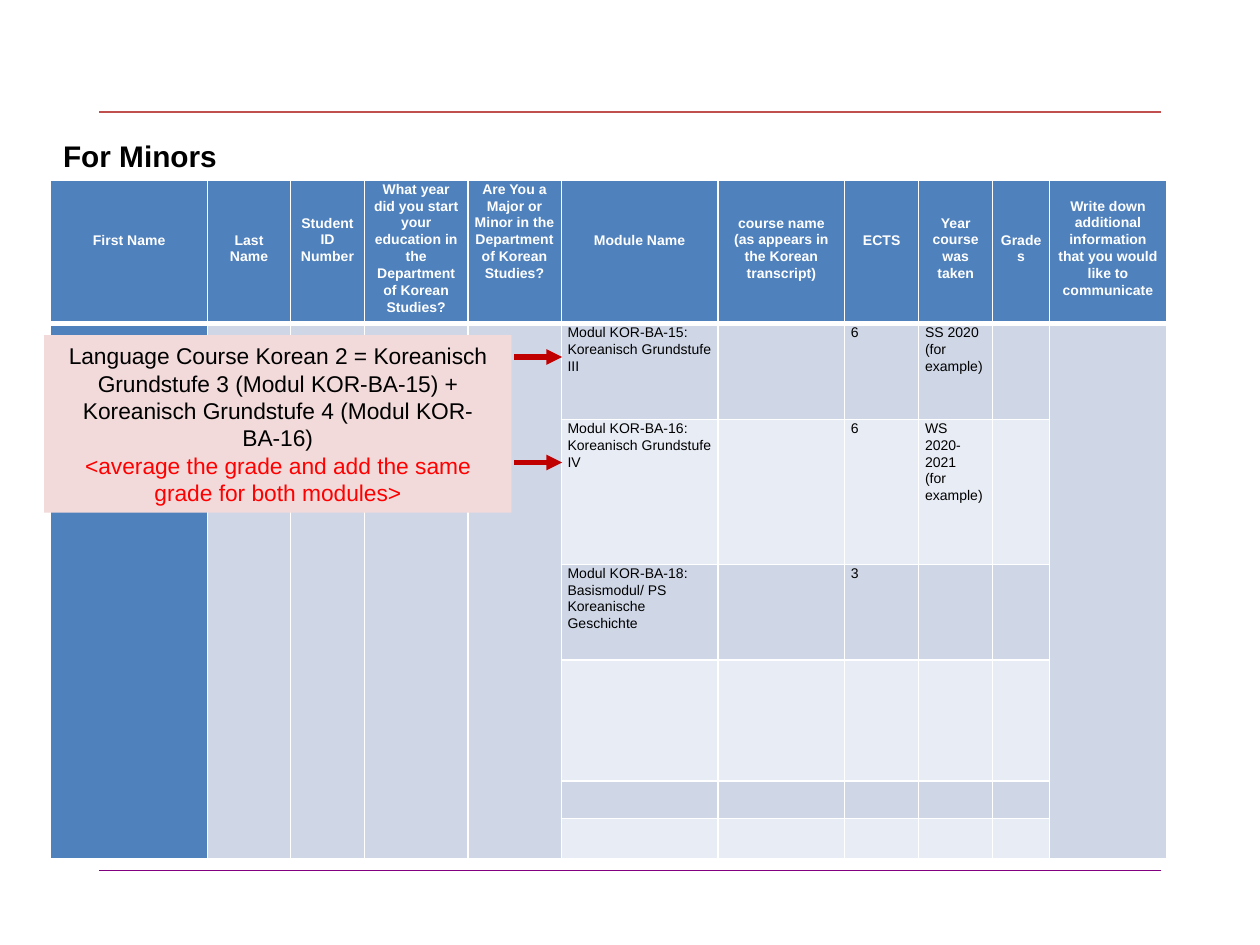
from lxml import etree
from pptx import Presentation
from pptx.dml.color import RGBColor
from pptx.enum import shapes, text
from pptx.oxml.ns import qn
from pptx.util import Pt

FONT = "Arial"
WHITE = RGBColor(0xFF, 0xFF, 0xFF)
BLACK = RGBColor(0, 0, 0)
RED = RGBColor(0xFF, 0, 0)
HEADER_BLUE = RGBColor(0x4F, 0x81, 0xBD)
BAND_DARK = RGBColor(0xCF, 0xD7, 0xE7)
BAND_LIGHT = RGBColor(0xE8, 0xEC, 0xF4)
CALLOUT_PINK = RGBColor(0xF2, 0xDA, 0xDA)
ARROW_RED = RGBColor(0xC0, 0, 0)
RULE_RED = RGBColor(0xC0, 0x50, 0x4D)
RULE_PURPLE = RGBColor(0x80, 0, 0x80)

LINE_HEIGHT = 9.7
COLUMN_WIDTHS = [89.7, 47.3, 42.4, 59, 53.4, 89.7, 72.3, 42.3, 42.3, 32.5, 66.8]
ROW_HEIGHTS = [82, 54.7, 82.8, 54.7, 69.1, 21.6, 23]
MERGED_COLUMNS = [0, 1, 2, 3, 4, 10]

# Each heading: lines left free above it, then its paragraphs
HEADINGS = [
    (3, ["First Name"]),
    (3, ["Last Name"]),
    (2, ["Student ID Number"]),
    (0, ["What year did you start your education in the Department of Korean Studies?"]),
    (0, ["Are You a Major or Minor in the Department of Korean Studies?"]),
    (3, ["Module Name"]),
    (2, ["course name", "(as appears in the Korean transcript)"]),
    (3, ["ECTS"]),
    (2, ["Year course was taken"]),
    (3, ["Grades"]),
    (1, ["Write down additional information that you would like to communicate"]),
]
ENTRIES = {
    (1, 5): ["Modul KOR-BA-15:", "Koreanisch Grundstufe", "III"],
    (1, 7): ["6"],
    (1, 8): ["SS 2020 (for example)"],
    (2, 5): ["Modul KOR-BA-16:", "Koreanisch Grundstufe", "IV"],
    (2, 7): ["6"],
    (2, 8): ["WS 2020-2021", "(for example)"],
    (3, 5): ["Modul KOR-BA-18:", "Basismodul/ PS", "Koreanische Geschichte"],
    (3, 7): ["3"],
}


def write(frame, lines, size, colors=(BLACK,), bold=False,
          align=text.PP_ALIGN.LEFT, spacing=1.0):
    """Write one paragraph per line; the last colour serves all further lines."""
    for index, line in enumerate(lines):
        paragraph = frame.paragraphs[0] if index == 0 else frame.add_paragraph()
        paragraph.alignment = align
        paragraph.line_spacing = spacing
        run = paragraph.add_run()
        run.text = line
        run.font.name = FONT
        run.font.size = Pt(size)
        run.font.bold = bold
        run.font.color.rgb = colors[min(index, len(colors) - 1)]


def add_line(slide, start, end, color, width, arrow=False):
    line = slide.shapes.add_connector(
        shapes.MSO_CONNECTOR.STRAIGHT, *(Pt(value) for value in (*start, *end)))
    line.line.color.rgb = color
    line.line.width = Pt(width)
    if arrow:
        etree.SubElement(line.line._get_or_add_ln(), qn("a:tailEnd"), type="triangle")
    etree.SubElement(line._element.spPr, qn("a:effectLst"))


def set_borders(cell, bottom_width):
    properties = cell._tc.get_or_add_tcPr()
    widths = {"a:lnL": 1, "a:lnR": 1, "a:lnT": 1, "a:lnB": bottom_width}
    for index, (tag, width) in enumerate(widths.items()):
        border = etree.Element(qn(tag), w=str(Pt(width)))
        fill = etree.SubElement(border, qn("a:solidFill"))
        etree.SubElement(fill, qn("a:srgbClr"), val=str(WHITE))
        properties.insert(index, border)


def style_cell(cell, fill, bottom_width=1, free_lines=0):
    cell.margin_left = cell.margin_right = Pt(3.6)
    cell.margin_top = Pt(free_lines * LINE_HEIGHT)
    cell.margin_bottom = 0
    cell.fill.solid()
    cell.fill.fore_color.rgb = fill
    set_borders(cell, bottom_width)


def fill_body_cell(cell, row, column):
    if column == 0:
        fill = HEADER_BLUE
    elif column in MERGED_COLUMNS or row % 2:
        fill = BAND_DARK
    else:
        fill = BAND_LIGHT
    style_cell(cell, fill)
    if (row, column) in ENTRIES:
        write(cell.text_frame, ENTRIES[row, column], 8, spacing=1.07)
    else:  # keeps empty cells from stretching the low rows
        etree.SubElement(cell.text_frame.paragraphs[0]._p, qn("a:endParaRPr"), sz="800")


def add_module_table(slide):
    frame = slide.shapes.add_table(
        len(ROW_HEIGHTS), len(COLUMN_WIDTHS), Pt(29), Pt(103),
        Pt(sum(COLUMN_WIDTHS)), Pt(sum(ROW_HEIGHTS)))
    table = frame.table
    table.horz_banding = False
    for column, width in zip(table.columns, COLUMN_WIDTHS):
        column.width = Pt(width)
    for row, height in zip(table.rows, ROW_HEIGHTS):
        row.height = Pt(height)

    for column, (free_lines, lines) in enumerate(HEADINGS):
        cell = table.cell(0, column)
        style_cell(cell, HEADER_BLUE, bottom_width=3, free_lines=free_lines)
        write(cell.text_frame, lines, 8, colors=(WHITE,), bold=True,
              align=text.PP_ALIGN.CENTER, spacing=1.07)
        for row in range(1, len(ROW_HEIGHTS)):
            fill_body_cell(table.cell(row, column), row, column)
    for column in MERGED_COLUMNS:
        table.cell(1, column).merge(table.cell(len(ROW_HEIGHTS) - 1, column))


def add_callout(slide):
    callout = slide.shapes.add_shape(
        shapes.MSO_SHAPE.RECTANGLE, Pt(25.2), Pt(191.5), Pt(267), Pt(101.5))
    callout.shadow.inherit = False
    callout.fill.solid()
    callout.fill.fore_color.rgb = CALLOUT_PINK
    callout.line.fill.background()
    callout.text_frame.word_wrap = True
    write(callout.text_frame,
          ["Language Course Korean 2 = Koreanisch Grundstufe 3 (Modul KOR-BA-15) + "
           "Koreanisch Grundstufe 4 (Modul KOR-BA-16)",
           "<average the grade and add the same grade for both modules>"],
          13, colors=(BLACK, RED), align=text.PP_ALIGN.CENTER)


def set_title(slide):
    title = slide.shapes.title
    title.left, title.top, title.width, title.height = Pt(28.8), Pt(71.5), Pt(222), Pt(35)
    frame = title.text_frame
    frame.margin_left = frame.margin_right = Pt(7.2)
    frame.margin_top = frame.margin_bottom = Pt(7.2)
    frame.vertical_anchor = text.MSO_ANCHOR.TOP
    frame.auto_size = text.MSO_AUTO_SIZE.NONE
    frame.word_wrap = True
    write(frame, ["For Minors"], 17, bold=True)


def main():
    presentation = Presentation()
    presentation.slide_width, presentation.slide_height = Pt(720), Pt(540)
    slide = presentation.slides.add_slide(presentation.slide_layouts[5])
    set_title(slide)
    for y, color in ((64, RULE_RED), (497.3, RULE_PURPLE)):
        add_line(slide, (56.7, y), (663.3, y), color, 0.75)
    add_module_table(slide)
    add_callout(slide)
    for y in (204, 264.3):
        add_line(slide, (293.8, y), (321.2, y), ARROW_RED, 3, arrow=True)
    presentation.save("out.pptx")


if __name__ == "__main__":
    main()
